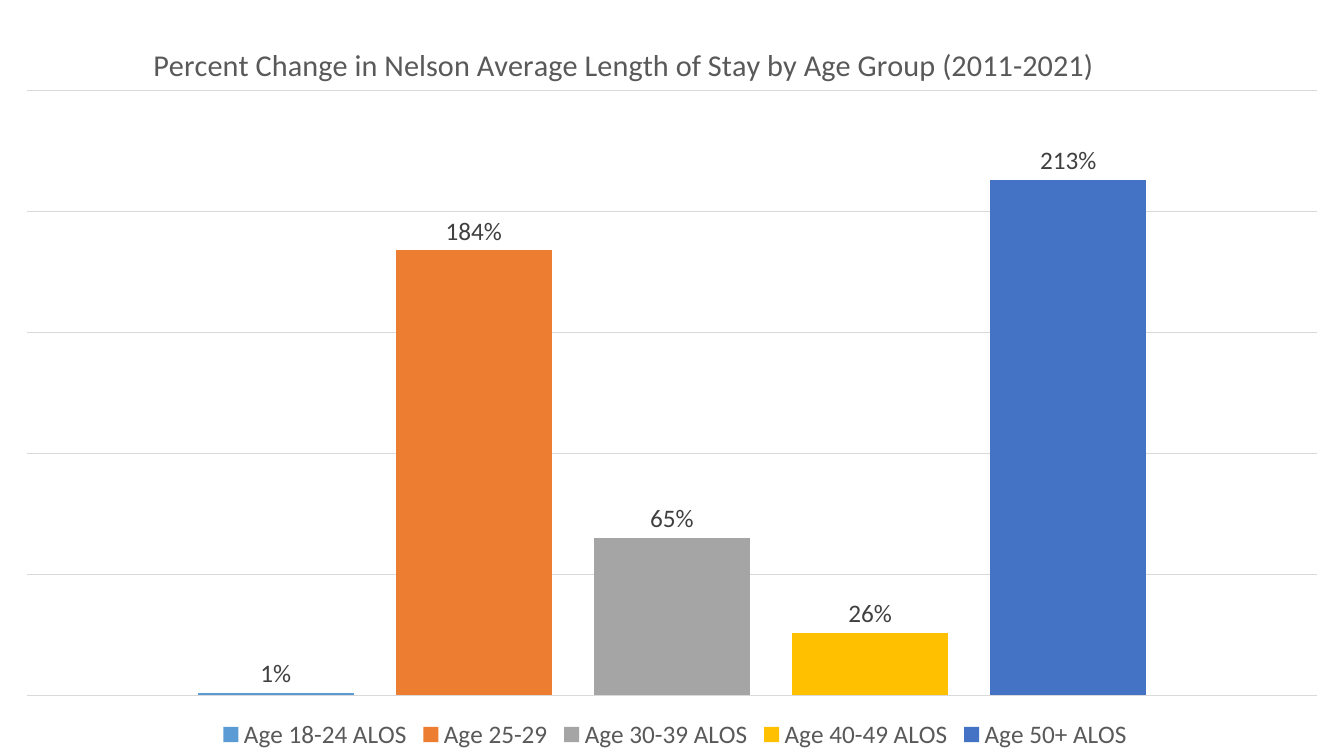
import pptx
import pptx.chart.data
import pptx.dml.color
import pptx.enum.chart
import pptx.oxml
import pptx.oxml.ns
import pptx.util

COLORS = {
    "title": "595959",
    "label": "404040",
    "grid": "D9D9D9",
}
STAYS = [
    ("Age 18-24 ALOS", 0.01, "5B9BD5"),
    ("Age 25-29", 1.84, "ED7D31"),
    ("Age 30-39 ALOS", 0.65, "A5A5A5"),
    ("Age 40-49 ALOS", 0.26, "FFC000"),
    ("Age 50+ ALOS", 2.13, "4472C4"),
]
TITLE = "Percent Change in Nelson Average Length of Stay by Age Group (2011-2021)"
WIDTH, HEIGHT = 960, 540


class Deck:
    font_name = "Calibri"
    font_size = 18

    def __init__(self):
        self.prs = pptx.Presentation()
        self.prs.slide_width = pptx.util.Pt(WIDTH)
        self.prs.slide_height = pptx.util.Pt(HEIGHT)
        self.slide = self.prs.slides.add_slide(self.prs.slide_layouts[6])

    def rgb(self, value):
        return pptx.dml.color.RGBColor.from_string(value)

    def style(self, font, color, size=font_size):
        font.name = self.font_name
        font.size = pptx.util.Pt(size)
        font.bold = False
        font.color.rgb = self.rgb(COLORS[color])

    def place(self, element, target=None, **fractions):
        layout = element.find(pptx.oxml.ns.qn("c:layout"))
        if layout is not None:
            element.remove(layout)
        modes = "".join(f'<c:{k}Mode val="edge"/>' for k in "xy")
        sizes = "".join(f'<c:{k} val="{v}"/>' for k, v in fractions.items())
        inner = f'<c:layoutTarget val="{target}"/>' if target else ""
        layout = pptx.oxml.parse_xml(
            f'<c:layout {pptx.oxml.ns.nsdecls("c")}><c:manualLayout>'
            f"{inner}{modes}{sizes}</c:manualLayout></c:layout>"
        )
        index = 0 if target else 1
        element.insert(index, layout)

    def column_chart(self, x, y, w, h, rows):
        data = pptx.chart.data.CategoryChartData(number_format="0%")
        data.categories = ["1"]
        for name, value, _ in rows:
            data.add_series(name, [value])
        frame = self.slide.shapes.add_chart(
            pptx.enum.chart.XL_CHART_TYPE.COLUMN_CLUSTERED,
            *map(pptx.util.Pt, (x, y, w, h)), data,
        )
        chart = frame.chart
        self.style(chart.font, "title")
        plot = chart.plots[0]
        plot.gap_width = 219
        plot.overlap = -27
        plot.vary_by_categories = False
        for series, (_, _, color) in zip(plot.series, rows):
            series.format.fill.solid()
            series.format.fill.fore_color.rgb = self.rgb(color)
            labels = series.data_labels
            labels.show_value = True
            labels.number_format = "0%"
            labels.number_format_is_linked = False
            labels.position = pptx.enum.chart.XL_LABEL_POSITION.OUTSIDE_END
            self.style(labels.font, "label")
        self.place(chart._chartSpace.chart.plotArea, "inner",
                   x=0.02, y=0.12, w=0.96, h=0.8)
        return chart

    def axes(self, chart, maximum, step):
        chart.category_axis.visible = False
        axis = chart.value_axis
        axis.visible = False
        axis.minimum_scale = 0
        axis.maximum_scale = maximum
        axis.major_unit = step
        axis.tick_labels.number_format = "0%"
        axis.tick_labels.number_format_is_linked = False
        axis.has_major_gridlines = True
        line = axis.major_gridlines.format.line
        line.width = pptx.util.Pt(0.75)
        line.color.rgb = self.rgb(COLORS["grid"])

    def title(self, chart, text):
        chart.has_title = True
        tf = chart.chart_title.text_frame
        tf.text = text
        self.style(tf.paragraphs[0].runs[0].font, "title", 21.6)
        chart.chart_title.include_in_layout = False
        self.place(chart._chartSpace.chart.find(pptx.oxml.ns.qn("c:title")),
                   x=0.11, y=0.05)

    def legend(self, chart):
        chart.has_legend = True
        legend = chart.legend
        legend.position = pptx.enum.chart.XL_LEGEND_POSITION.BOTTOM
        legend.include_in_layout = False
        self.style(legend.font, "title")
        self.place(legend._element, x=0.16, y=0.95)


def main():
    deck = Deck()
    chart = deck.column_chart(0, 0, WIDTH, HEIGHT, STAYS)
    deck.axes(chart, maximum=2.5, step=0.5)
    deck.title(chart, TITLE)
    deck.legend(chart)
    deck.prs.save("out.pptx")


if __name__ == "__main__":
    main()
